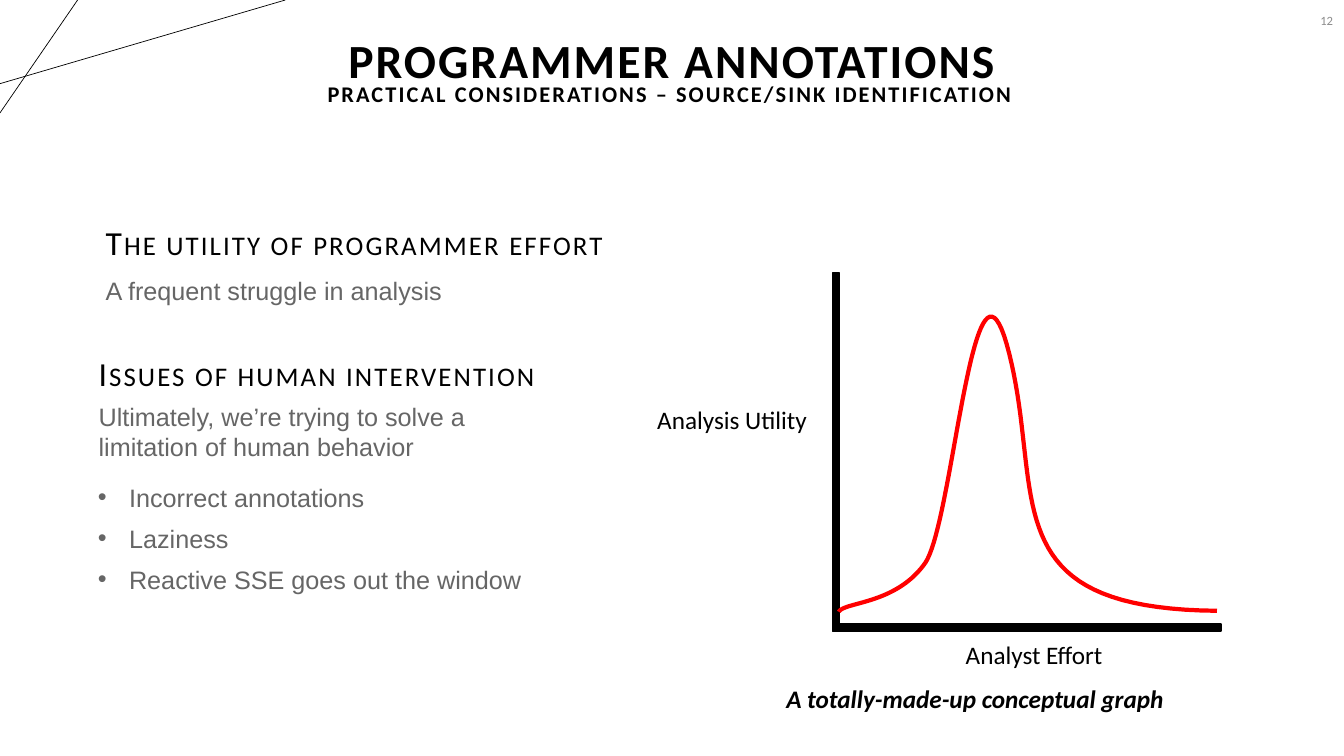
from lxml import etree
from pptx import Presentation
from pptx import util as u
from pptx.dml.color import RGBColor
from pptx.enum import shapes, text
from pptx.oxml.ns import qn

HUES = {"ink": "000000", "body": "666666", "page": "8C8C8C", "curve": "FF0000"}
LEFT, MID, RIGHT = text.PP_ALIGN.LEFT, text.PP_ALIGN.CENTER, text.PP_ALIGN.RIGHT
TITLE = {"name": "Calibri", "size": u.Pt(34), "bold": True}
SUB = {"name": "Calibri", "size": u.Pt(16), "bold": True}
HEAD = {"name": "Calibri", "size": u.Pt(24)}
BODY = {"name": "Arial", "size": u.Pt(18)}
LABEL = {"name": "Calibri", "size": u.Pt(18)}
NOTE = {**LABEL, "bold": True, "italic": True}
PAGE = {"name": "Calibri", "size": u.Pt(9)}
TIGHT = {"line_spacing": 0.9}
LEAD = {"line_spacing": 0.9, "space_before": u.Pt(10)}
LIST = {"space_before": u.Pt(0), "space_after": u.Pt(7.7)}

BEND = [
    ((8.32, 6.07), (8.37, 5.97), (8.89, 6), (9.18, 5.58)),
    ((9.18, 5.58), (9.46, 5.15), (9.66, 2.1), (10.01, 3.51)),
    ((10.01, 3.51), (10.36, 4.91), (9.83, 6.04), (12.07, 6.06)),
]


def color(hue):
    return RGBColor.from_string(HUES[hue])


def apply(obj, form):
    for key, val in form.items():
        setattr(obj, key, val)


def place(shape, spot):
    apply(shape, dict(zip(("left", "top", "width", "height"), map(u.Inches, spot))))


def write(shape, lines, font, hue="ink", align=LEFT, para={}, caps={}, wrap=True, mid=False):
    frame = shape.text_frame
    anchor = text.MSO_ANCHOR.MIDDLE if mid else text.MSO_ANCHOR.TOP
    apply(frame, {"word_wrap": wrap, "auto_size": text.MSO_AUTO_SIZE.NONE,
                  "vertical_anchor": anchor})
    frame.text = "\n".join(lines)
    for par in frame.paragraphs:
        apply(par, {"alignment": align, **para})
        run = par.runs[0]
        apply(run.font, font)
        run.font.color.rgb = color(hue)
        for key, val in caps.items():
            run.font._element.set(key, val)


def label(slide, spot, words, font, **form):
    box = slide.shapes.add_textbox(*map(u.Inches, spot))
    write(box, [words], font, **form)


def bullet(shape):
    for par in shape.text_frame.paragraphs:
        props = par._p.get_or_add_pPr()
        props.set("marL", str(u.Inches(0.31)))
        props.set("indent", str(-u.Inches(0.31)))
        etree.SubElement(props, qn("a:buFont")).set("typeface", "Arial")
        etree.SubElement(props, qn("a:buChar")).set("char", "•")


def stroke(slide, start, end):
    line = slide.shapes.add_connector(
        shapes.MSO_CONNECTOR.STRAIGHT, *map(u.Inches, start + end))
    line.line.color.rgb = color("ink")
    line.line.width = u.Pt(0.5)
    etree.SubElement(line._element.spPr, qn("a:effectLst"))


def axis(slide, spot):
    bar = slide.shapes.add_shape(shapes.MSO_SHAPE.RECTANGLE, *map(u.Inches, spot))
    bar.shadow.inherit = False
    bar.fill.solid()
    bar.fill.fore_color.rgb = color("ink")
    bar.line.color.rgb = color("ink")
    bar.line.width = u.Pt(1)


def bezier(knots, t):
    rates = ((1 - t) ** 3, 3 * t * (1 - t) ** 2, 3 * t * t * (1 - t), t ** 3)
    return tuple(u.Inches(sum(r * k[i] for r, k in zip(rates, knots))) for i in (0, 1))


def curve(slide, steps=40):
    spots = [bezier(knots, n / steps) for knots in BEND for n in range(1, steps + 1)]
    pen = slide.shapes.build_freeform(*bezier(BEND[0], 0))
    pen.add_line_segments(spots, close=False)
    shape = pen.convert_to_shape()
    shape.shadow.inherit = False
    shape.fill.background()
    shape.line.color.rgb = color("curve")
    shape.line.width = u.Pt(3)


def graph(slide):
    axis(slide, (8.26, 2.71, 0.07, 3.55))
    axis(slide, (8.26, 6.19, 3.85, 0.07))
    curve(slide)
    label(slide, (6.42, 3.96, 1.81, 0.4), "Analysis Utility", LABEL, wrap=False)
    label(slide, (9.48, 6.29, 1.67, 0.4), "Analyst Effort", LABEL, wrap=False)
    label(slide, (7.7, 6.73, 4.28, 0.4), "A totally-made-up conceptual graph", NOTE, wrap=False)


def main():
    deck = Presentation()
    deck.slide_width, deck.slide_height = u.Inches(13.33), u.Inches(7.5)
    slide = deck.slides.add_slide(deck.slide_layouts[1])
    wide = {"spc": "150"}
    small = {**wide, "cap": "small"}

    stroke(slide, (0, 0.83), (2.83, 0))
    stroke(slide, (0.77, 0), (0, 1.12))
    label(slide, (10.32, 0, 3, 0.4), "12", PAGE, hue="page", align=RIGHT, mid=True)

    title = slide.shapes.title
    place(title, (0.01, -0.1, 13.31, 1.45))
    write(title, ["PROGRAMMER ANNOTATIONS"], TITLE, align=MID, para=TIGHT, caps=wide, mid=True)
    label(slide, (-0.01, 0.22, 13.31, 1.45),
          "PRACTICAL CONSIDERATIONS – SOURCE/SINK IDENTIFICATION",
          SUB, align=MID, para=TIGHT, caps=wide, mid=True)

    label(slide, (0.95, 2.2, 9.9, 0.75), "The utility of programmer effort",
          HEAD, para=LEAD, caps=small)
    label(slide, (0.95, 2.68, 3.96, 0.4), "A frequent struggle in analysis", BODY, hue="body")
    label(slide, (0.88, 3.5, 5.44, 0.75), "Issues of human intervention",
          HEAD, para=LEAD, caps=small)
    label(slide, (0.88, 3.93, 3.96, 0.71),
          "Ultimately, we’re trying to solve a limitation of human behavior", BODY, hue="body")

    issues = slide.placeholders[1]
    place(issues, (0.87, 4.73, 4.5, 1.2))
    write(issues, ["Incorrect annotations", "Laziness", "Reactive SSE goes out the window"],
          BODY, hue="body", para=LIST)
    bullet(issues)
    graph(slide)
    deck.save("out.pptx")


if __name__ == "__main__":
    main()
